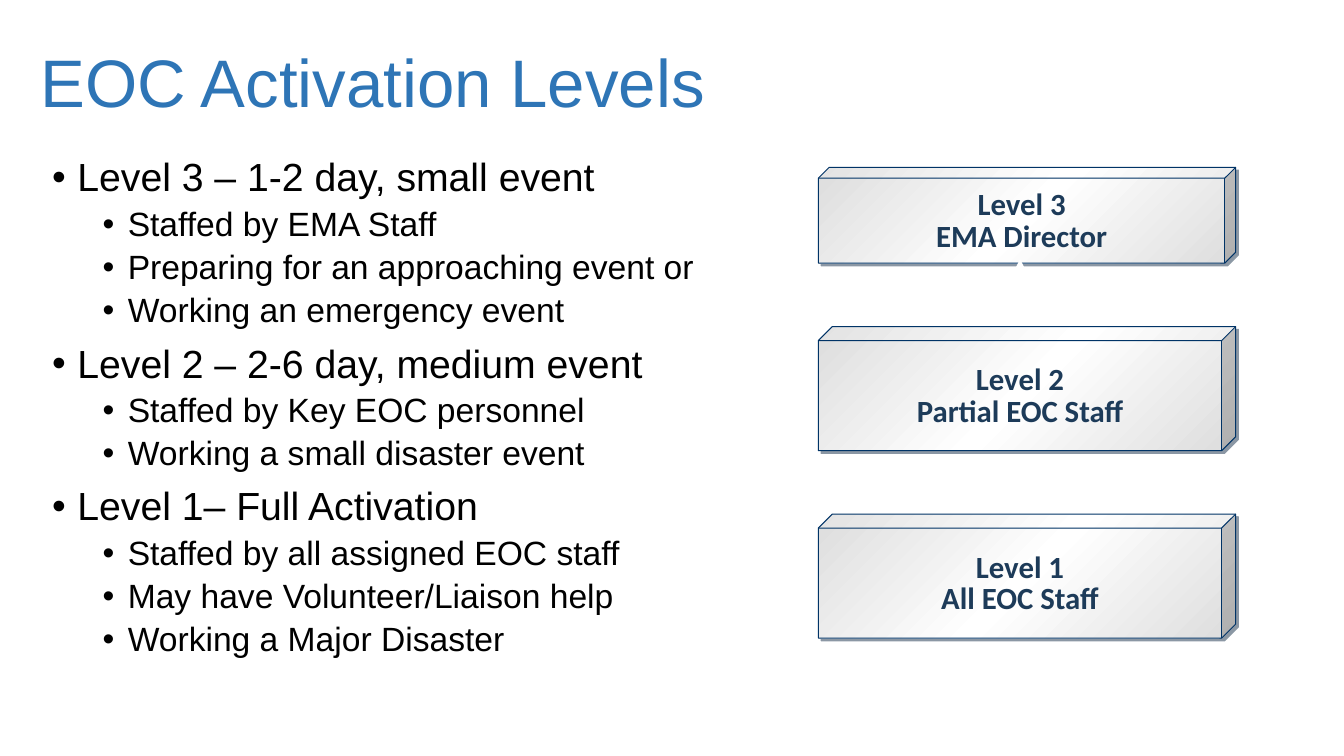
from copy import deepcopy

from lxml import etree
from pptx import Presentation
from pptx.dml.color import RGBColor
from pptx.enum.shapes import MSO_CONNECTOR as CONN, MSO_SHAPE as SHAPE
from pptx.enum.text import MSO_ANCHOR as ANCHOR, PP_ALIGN as ALIGN
from pptx.oxml.ns import qn
from pptx.util import Pt

BLUE = RGBColor(0x2E, 0x75, 0xB6)
BLACK = RGBColor(0, 0, 0)
WHITE = RGBColor(0xFF, 0xFF, 0xFF)
GREY = RGBColor(0xDD, 0xDD, 0xDD)
EDGE = RGBColor(0x00, 0x33, 0x66)
NAVY = RGBColor(0x1D, 0x3B, 0x59)
SHADOW = RGBColor(0x18, 0x31, 0x4A)


def style(p, color, **formats):
    for name, value in formats.items():
        setattr(p.font, name, value)
    p.font.color.rgb = color


def add(parent, tag, **attrs):
    return etree.SubElement(parent, qn(tag), attrs)


prs = Presentation()
prs.slide_width, prs.slide_height = Pt(960), Pt(540)
s = prs.slides.add_slide(prs.slide_layouts[5])

# Title
title = s.shapes.title
title.left, title.top, title.width, title.height = Pt(21.6), Pt(23), Pt(922.3), Pt(76.3)
tf = title.text_frame
tf.text = "EOC Activation Levels"
tf.vertical_anchor = ANCHOR.MIDDLE
p = tf.paragraphs[0]
p.alignment, p.line_spacing = ALIGN.LEFT, 0.9
style(p, BLUE, name="Arial", size=Pt(48))

# Bulleted list of levels
levels = [
    ("Level 3 – 1-2 day, small event",
     ["Staffed by EMA Staff", "Preparing for an approaching event or",
      "Working an emergency event"]),
    ("Level 2 – 2-6 day, medium event",
     ["Staffed by Key EOC personnel", "Working a small disaster event"]),
    ("Level 1– Full Activation",
     ["Staffed by all assigned EOC staff", "May have Volunteer/Liaison help",
      "Working a Major Disaster"]),
]
lines = [(text, depth) for head, items in levels
         for text, depth in [(head, 0)] + [(item, 1) for item in items]]
tf = s.shapes.add_textbox(Pt(30.2), Pt(109.4), Pt(517), Pt(406.8)).text_frame
tf.word_wrap = True
for i, (text, depth) in enumerate(lines):
    p = tf.add_paragraph() if i else tf.paragraphs[0]
    p.text, p.level, p.line_spacing = text, depth, 0.9
    p.space_before = Pt((10, 5)[depth] if i else 0)
    pPr = p._p.get_or_add_pPr()
    pPr.set("marL", str(Pt((18, 54)[depth])))
    pPr.set("indent", str(Pt(-18)))
    add(pPr, "a:buFont", typeface="Arial")
    add(pPr, "a:buChar", char="•")
    style(p, BLACK, name="Arial", size=Pt((28, 24)[depth]))


# Cubes and the white arrows between them, from back to front
CUBE, ARROW = "cube", "arrow"
diagram = [
    (CUBE, 233.3, 88.6, ["Level 2", "Partial EOC Staff"]),
    (CUBE, 119.5, 68.4, ["Level 3", "EMA Director"]),
    (ARROW, 232.6, 185, None),
    (ARROW, 389.5, 341.3, None),
    (CUBE, 367.2, 88.6, ["Level 1", "All EOC Staff"]),
]
for kind, top, extent, texts in diagram:
    if kind == ARROW:
        x = Pt(728.6)
        sp = s.shapes.add_connector(CONN.STRAIGHT, x, Pt(top), x, Pt(extent))
        sp.line.color.rgb, sp.line.width = WHITE, Pt(6)
        add(sp.line._get_or_add_ln(), "a:tailEnd", type="triangle")
        add(sp._element.spPr, "a:effectLst")
        continue

    sp = s.shapes.add_shape(SHAPE.CUBE, Pt(584.6), Pt(top), Pt(298.1), Pt(extent))
    sp.adjustments[0] = 0.113
    sp.line.color.rgb, sp.line.width = EDGE, Pt(0.75)

    # Grey, white, grey gradient
    sp.fill.gradient()
    sp.fill.gradient_angle = 315
    stops = sp._element.spPr.find(qn("a:gradFill")).find(qn("a:gsLst"))
    stops.append(deepcopy(stops[0]))
    for stop, pos, color in zip(sp.fill.gradient_stops, (0, 0.5, 1), (GREY, WHITE, GREY)):
        stop.position, stop.color.rgb = pos, color

    # Offset shadow
    sp.shadow.inherit = False
    effects = sp._element.spPr.find(qn("a:effectLst"))
    shadow = add(effects, "a:outerShdw", blurRad="0", dist=str(Pt(2.8)),
                 dir="2700000", algn="ctr", rotWithShape="0")
    add(add(shadow, "a:srgbClr", val=str(SHADOW)), "a:alpha", val="50000")

    tf = sp.text_frame
    tf.word_wrap, tf.vertical_anchor = False, ANCHOR.MIDDLE
    tf.margin_left = tf.margin_right = Pt(7.2)
    tf.margin_top, tf.margin_bottom = Pt(3.6), Pt(1.4)
    tf.text = "\n".join(texts)
    for p in tf.paragraphs:
        p.alignment, p.line_spacing = ALIGN.CENTER, 0.85
        style(p, NAVY, name="Calibri", size=Pt(22), bold=True)

prs.save("out.pptx")
